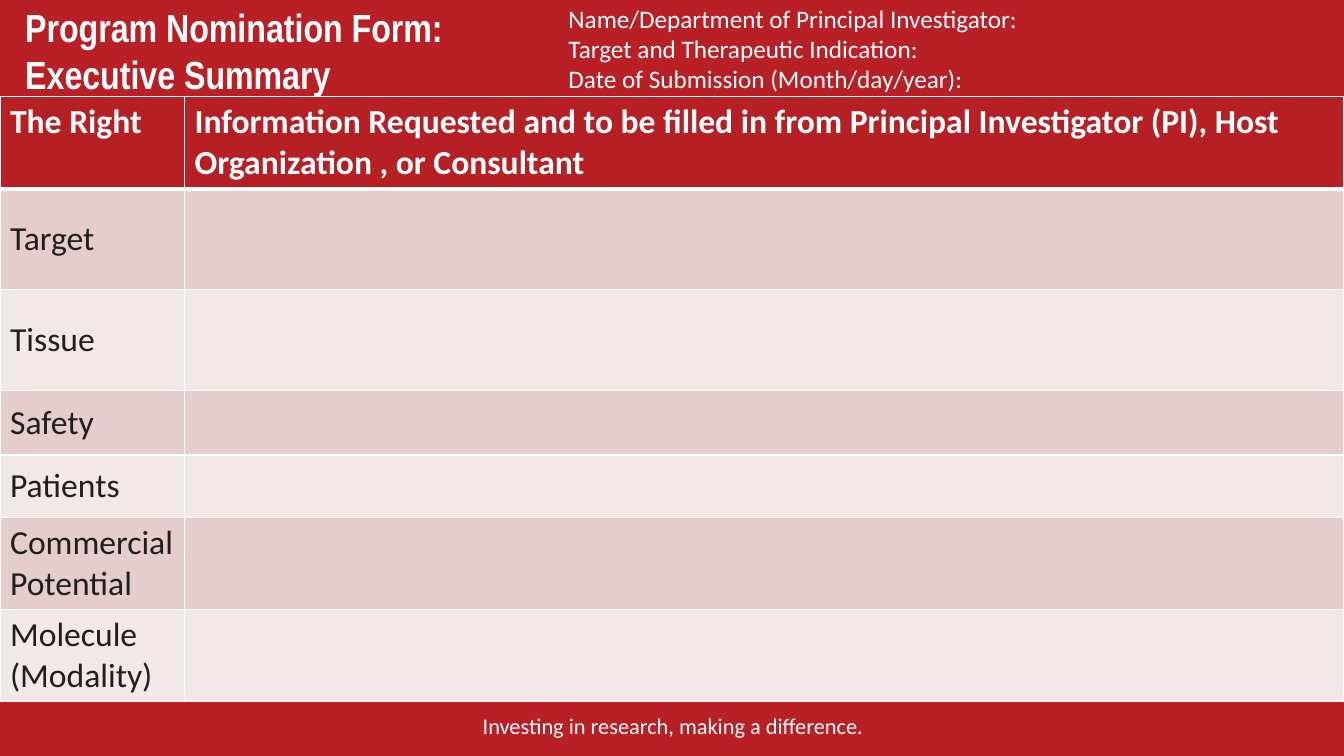
from lxml import etree
from pptx import Presentation
from pptx.dml.color import RGBColor
from pptx.enum.shapes import MSO_SHAPE
from pptx.enum.text import MSO_ANCHOR, MSO_AUTO_SIZE, PP_ALIGN
from pptx.oxml.ns import qn
from pptx.util import Inches, Pt

RECT = MSO_SHAPE.RECTANGLE
TOP, MIDDLE = MSO_ANCHOR.TOP, MSO_ANCHOR.MIDDLE
LEFT, CENTER = PP_ALIGN.LEFT, PP_ALIGN.CENTER
NO_FIT = MSO_AUTO_SIZE.NONE

WIDE = 13.33
RED, HEAD, WHITE, DARK = "B82025", "B62025", "FFFFFF", "201E1E"
BANDS = ["E5CDCD", "F3E8E8"]
COLS = [1.83, 11.5]
ROWS = [
    ("The Right", 0.8),
    ("Target", 1),
    ("Tissue", 1),
    ("Safety", 0.64),
    ("Patients", 0.62),
    ("Commercial Potential", 0.78),
    ("Molecule (Modality)", 0.8),
]
ASK = ("Information Requested and to be filled in from Principal "
       "Investigator (PI), Host Organization , or Consultant")
FIELDS = [
    "Name/Department of Principal Investigator:",
    "Target and Therapeutic Indication:",
    "Date of Submission (Month/day/year):",
]


def color(code):
    return RGBColor.from_string(code)


def place(shape, left, top, width, height):
    shape.left, shape.top = Inches(left), Inches(top)
    shape.width, shape.height = Inches(width), Inches(height)


def style(frame, size, code, bold=False, face="Calibri", align=LEFT):
    """Format every paragraph and run of a text frame."""
    for para in frame.paragraphs:
        para.alignment = align
        for run in para.runs:
            font = run.font
            font.name, font.size, font.bold = face, Pt(size), bold
            font.color.rgb = color(code)


def add_bar(slide, top, height):
    bar = slide.shapes.add_shape(RECT, 0, Inches(top), Inches(WIDE), Inches(height))
    bar.shadow.inherit = False
    bar.fill.solid()
    bar.fill.fore_color.rgb = color(RED)
    bar.line.color.rgb = color(RED)
    bar.line.width = Pt(1)


def add_text(slide, box, lines, size, align=LEFT):
    frame = slide.shapes.add_textbox(*map(Inches, box)).text_frame
    frame.word_wrap = True
    frame.text = "\n".join(lines)
    style(frame, size, WHITE, align=align)


def set_title(slide, text):
    title = slide.shapes.title
    slide.shapes._spTree.append(title._element)
    place(title, 0.15, -0.02, 5.79, 0.56)
    frame = title.text_frame
    frame.text = text
    frame.word_wrap = True
    frame.auto_size = NO_FIT
    frame.vertical_anchor = TOP
    style(frame, 28, WHITE, True, "Arial Narrow")


def set_edges(cell, top, bottom):
    """Draw white cell borders; top and bottom are widths in points."""
    props = cell._tc.get_or_add_tcPr()
    edges = [("L", 1), ("R", 1), ("T", top), ("B", bottom)]
    for spot, (side, width) in enumerate(edges):
        line = etree.Element(qn("a:ln" + side), w=str(Pt(width)))
        fill = etree.SubElement(line, qn("a:solidFill"))
        etree.SubElement(fill, qn("a:srgbClr"), val=WHITE)
        props.insert(spot, line)


def set_cell(cell, text, row):
    head = row == 0
    cell.fill.solid()
    cell.fill.fore_color.rgb = color(HEAD if head else BANDS[(row - 1) % 2])
    cell.vertical_anchor = TOP if head else MIDDLE
    cell.text_frame.text = text
    style(cell.text_frame, 24, WHITE if head else DARK, head)
    set_edges(cell, 3 if row == 1 else 1, 3 if head else 1)


def add_form(slide):
    high = sum(height for _, height in ROWS)
    table = slide.shapes.add_table(
        len(ROWS), len(COLS), 0, Inches(0.96), Inches(WIDE), Inches(high)).table
    for col, width in zip(table.columns, COLS):
        col.width = Inches(width)
    for row, (label, height) in enumerate(ROWS):
        table.rows[row].height = Inches(height)
        set_cell(table.cell(row, 0), label, row)
        set_cell(table.cell(row, 1), "" if row else ASK, row)


def main():
    deck = Presentation()
    deck.slide_width, deck.slide_height = Inches(WIDE), Inches(7.5)
    slide = deck.slides.add_slide(deck.slide_layouts[5])
    add_bar(slide, 0, 0.95)
    add_bar(slide, 6.91, 0.58)
    add_text(slide, (0.01, 7.02, WIDE, 0.37),
             ["Investing in research, making a difference."], 16, CENTER)
    set_title(slide, "Program Nomination Form: Executive Summary")
    add_form(slide)
    add_text(slide, (5.54, -0.02, 7.17, 1.01), FIELDS, 18)
    deck.save("out.pptx")


if __name__ == "__main__":
    main()
